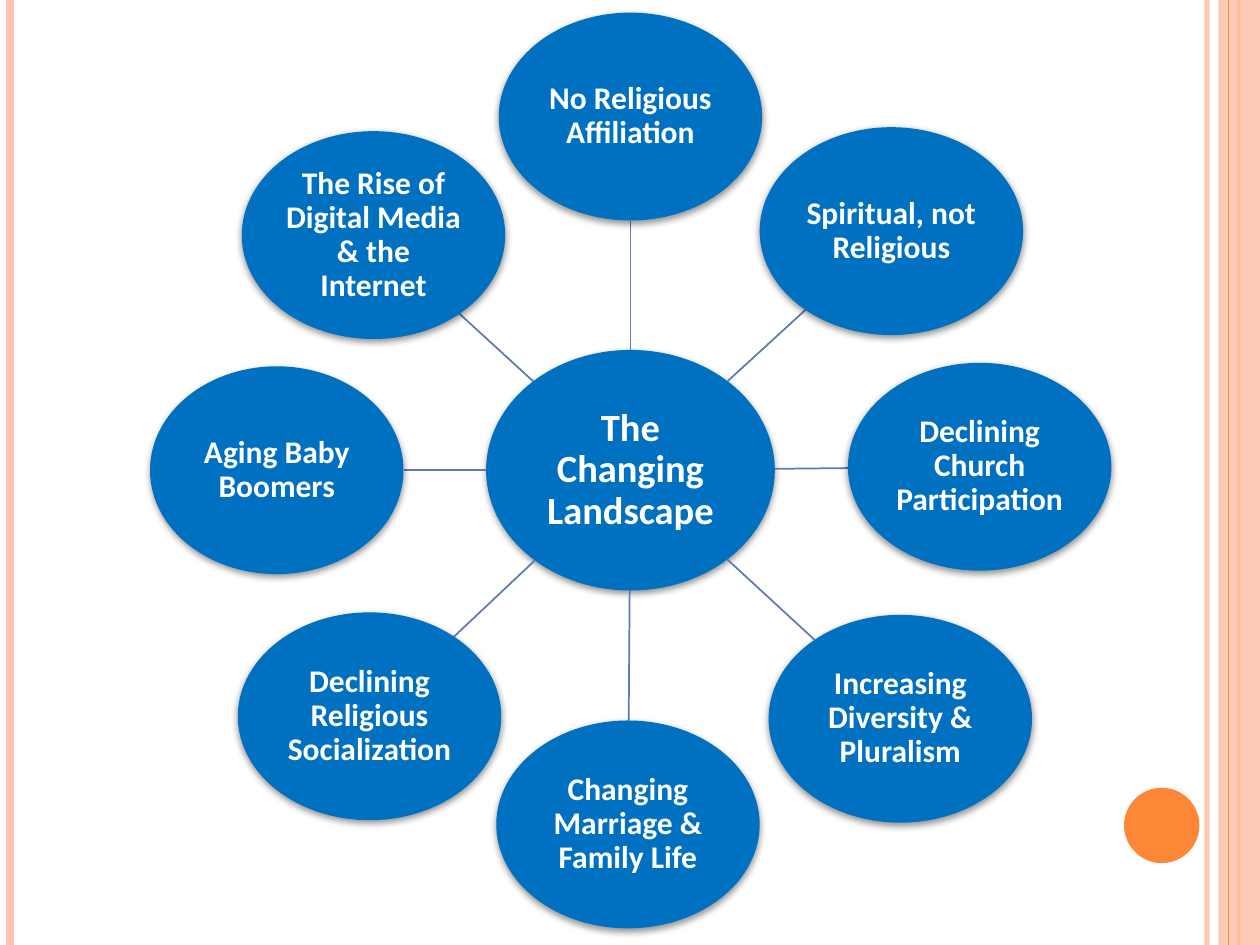
import math
from dataclasses import dataclass

import lxml.etree
import pptx
import pptx.dml.color
import pptx.enum.shapes
import pptx.enum.text
import pptx.oxml.ns
import pptx.util

Cm = pptx.util.Cm
Pt = pptx.util.Pt
RGBColor = pptx.dml.color.RGBColor
qn = pptx.oxml.ns.qn
MSO_SHAPE = pptx.enum.shapes.MSO_SHAPE

BLUE = RGBColor(0x00, 0x70, 0xC0)
SPOKE_BLUE = RGBColor(0x5E, 0x7A, 0xAE)
ORANGE = RGBColor(0xFE, 0x86, 0x37)
PEACH = RGBColor(0xFE, 0xC3, 0xAE)
WHITE = RGBColor(0xFF, 0xFF, 0xFF)
BLACK = RGBColor(0x00, 0x00, 0x00)

SLIDE_WIDTH, SLIDE_HEIGHT = 25.4, 19.05


@dataclass(frozen=True)
class Bubble:
    """An ellipse with a label; centre and size are in centimetres."""
    text: str
    x: float
    y: float
    width: float = 5.31
    height: float = 4.19
    font_size: float = 18
    inset: float = 0.03

    def edge_toward(self, other: "Bubble") -> tuple[float, float]:
        """Point where the line to the other centre leaves this ellipse."""
        dx, dy = other.x - self.x, other.y - self.y
        scale = 1 / math.hypot(2 * dx / self.width, 2 * dy / self.height)
        return self.x + dx * scale, self.y + dy * scale


@dataclass(frozen=True)
class Stripe:
    """A vertical line over the full slide height."""
    x: float
    color: RGBColor
    weight: float
    opacity: int = 100


HUB = Bubble("The Changing Landscape", 12.71, 9.48, 5.82, 4.85, 22, 0.05)
TOPICS = [
    Bubble("No Religious Affiliation", 12.71, 2.35),
    Bubble("Spiritual, not Religious", 17.97, 4.66),
    Bubble("Declining Church Participation", 19.75, 9.41),
    Bubble("Increasing Diversity & Pluralism", 18.15, 14.49),
    Bubble("Changing Marriage & Family Life", 12.66, 16.62),
    Bubble("Declining Religious Socialization", 7.45, 14.44),
    Bubble("Aging Baby Boomers", 5.58, 9.48, width=5.11),
    Bubble("The Rise of Digital Media & the Internet", 7.53, 4.74),
]
STRIPES_BEHIND = [
    Stripe(24.33, PEACH, 3, 93),
    Stripe(0.21, PEACH, 4.5),
    Stripe(24.97, ORANGE, 1.5),
]
STRIPE_IN_FRONT = Stripe(24.77, ORANGE, 0.75)


def set_opacity(parent, percent: int) -> None:
    """Make the first RGB colour below the element translucent."""
    color = next(parent.iter(qn("a:srgbClr")))
    lxml.etree.SubElement(color, qn("a:alpha"), val=str(percent * 1000))


def add_soft_shadow(shape) -> None:
    effects = shape._element.spPr.find(qn("a:effectLst"))
    shadow = lxml.etree.SubElement(
        effects, qn("a:outerShdw"), blurRad=str(Pt(4)), dist=str(Pt(1.6)),
        dir="5400000", rotWithShape="0")
    lxml.etree.SubElement(shadow, qn("a:srgbClr"), val=str(BLACK))
    set_opacity(shadow, 42)


def add_line(slide, start: tuple[float, float], end: tuple[float, float],
             color: RGBColor, weight: float):
    line = slide.shapes.add_connector(
        pptx.enum.shapes.MSO_CONNECTOR.STRAIGHT,
        Cm(start[0]), Cm(start[1]), Cm(end[0]), Cm(end[1]))
    line.line.color.rgb = color
    line.line.width = Pt(weight)
    lxml.etree.SubElement(line._element.spPr, qn("a:effectLst"))
    return line


def add_stripe(slide, stripe: Stripe) -> None:
    line = add_line(slide, (stripe.x, 0), (stripe.x, SLIDE_HEIGHT),
                    stripe.color, stripe.weight)
    if stripe.opacity < 100:
        set_opacity(line._element.spPr, stripe.opacity)


def add_plain_shape(slide, preset, left: float, top: float,
                    width: float, height: float, color: RGBColor):
    shape = slide.shapes.add_shape(
        preset, Cm(left), Cm(top), Cm(width), Cm(height))
    shape.fill.solid()
    shape.fill.fore_color.rgb = color
    shape.line.fill.background()
    shape.shadow.inherit = False
    return shape


def add_bubble(slide, bubble: Bubble) -> None:
    shape = add_plain_shape(
        slide, MSO_SHAPE.OVAL, bubble.x - bubble.width / 2,
        bubble.y - bubble.height / 2, bubble.width, bubble.height, BLUE)
    add_soft_shadow(shape)
    frame = shape.text_frame
    frame.word_wrap = True
    frame.vertical_anchor = pptx.enum.text.MSO_ANCHOR.MIDDLE
    frame.margin_left = frame.margin_right = Cm(bubble.inset)
    frame.margin_top = frame.margin_bottom = Cm(bubble.inset)
    paragraph = frame.paragraphs[0]
    paragraph.alignment = pptx.enum.text.PP_ALIGN.CENTER
    paragraph.line_spacing = 0.9
    run = paragraph.add_run()
    run.text = bubble.text
    run.font.name = "Calibri"
    run.font.size = Pt(bubble.font_size)
    run.font.bold = True
    run.font.color.rgb = WHITE


def add_frame_decoration(slide) -> None:
    for stripe in STRIPES_BEHIND:
        add_stripe(slide, stripe)
    band = add_plain_shape(slide, MSO_SHAPE.RECTANGLE, 24.56, 0,
                           SLIDE_WIDTH - 24.56, SLIDE_HEIGHT, PEACH)
    set_opacity(band._element.spPr, 87)
    add_stripe(slide, STRIPE_IN_FRONT)
    add_plain_shape(slide, MSO_SHAPE.OVAL, 22.66, 15.88, 1.52, 1.52, ORANGE)


def main() -> None:
    presentation = pptx.Presentation()
    presentation.slide_width = Cm(SLIDE_WIDTH)
    presentation.slide_height = Cm(SLIDE_HEIGHT)
    slide = presentation.slides.add_slide(presentation.slide_layouts[6])
    slide.background.fill.solid()
    slide.background.fill.fore_color.rgb = WHITE

    add_frame_decoration(slide)
    add_bubble(slide, HUB)
    for topic in TOPICS:
        add_line(slide, HUB.edge_toward(topic), topic.edge_toward(HUB),
                 SPOKE_BLUE, 1)
        add_bubble(slide, topic)
    presentation.save("out.pptx")


if __name__ == "__main__":
    main()
